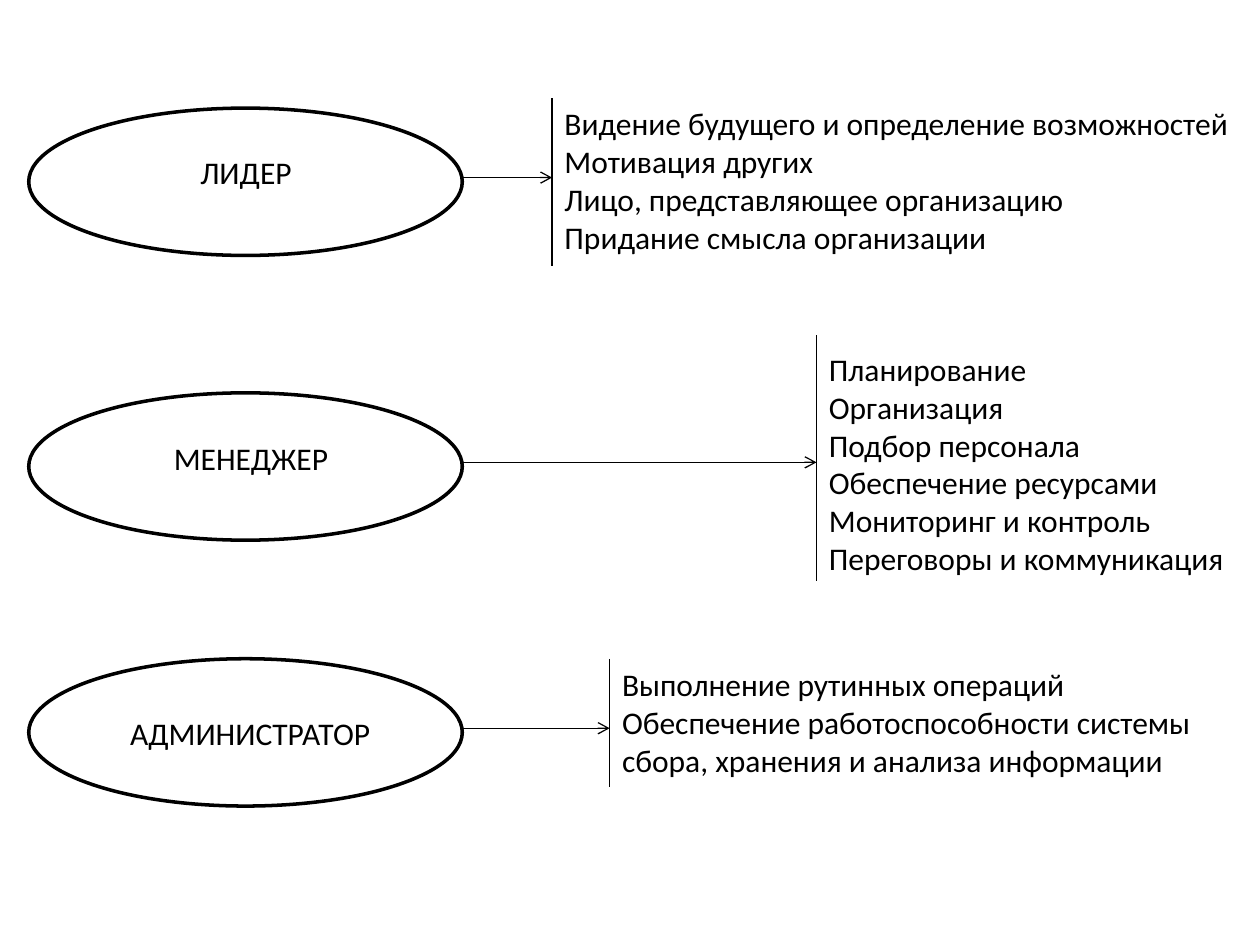
from pptx import Presentation
from pptx.dml.color import RGBColor
from pptx.enum.shapes import MSO_CONNECTOR, MSO_SHAPE
from pptx.enum.text import MSO_AUTO_SIZE, PP_ALIGN
from pptx.oxml.ns import qn
from pptx.util import Cm, Pt
from lxml.etree import SubElement

INK = "000000"
OVAL_LEFT, OVAL_WIDTH, OVAL_HEIGHT = 0.58, 8.74, 2.97
ARROW_DROP = 1.4  # from the top of the oval

# Boxes are (left, top, width, height) in cm; label boxes are relative to the oval,
# and each bar is (top, height)
ROLES = [
    {"role": "ЛИДЕР", "oval_top": 2.18, "label_box": (0.81, 0.79, 7.14, 1.02),
     "duties_box": (11.13, 1.98, 14.27, 3.33), "bar": (1.98, 3.38),
     "duties": ["Видение будущего и определение возможностей",
                "Мотивация других",
                "Лицо, представляющее организацию",
                "Придание смысла организации"]},
    {"role": "МЕНЕДЖЕР", "oval_top": 7.92, "label_box": (0.81, 0.81, 7.34, 1.02),
     "duties_box": (16.46, 6.93, 8.94, 4.88), "bar": (6.76, 4.95),
     "duties": ["Планирование", "Организация", "Подбор персонала",
                "Обеспечение ресурсами", "Мониторинг и контроль",
                "Переговоры и коммуникация"]},
    {"role": "АДМИНИСТРАТОР", "oval_top": 13.28, "label_box": (1.19, 0.99, 6.55, 1.02),
     "duties_box": (12.29, 13.28, 12.5, 2.57), "bar": (13.28, 2.59),
     "duties": ["Выполнение рутинных операций",
                "Обеспечение работоспособности системы сбора, "
                "хранения и анализа информации"]},
]


def color(hex_value):
    return RGBColor.from_string(hex_value)


def add_text(slide, box, lines, align=PP_ALIGN.LEFT):
    frame = slide.shapes.add_textbox(*map(Cm, box)).text_frame
    frame.word_wrap = True
    frame.auto_size = MSO_AUTO_SIZE.SHAPE_TO_FIT_TEXT
    frame.text = "\n".join(lines)
    for paragraph in frame.paragraphs:
        paragraph.alignment = align
        for run in paragraph.runs:
            run.font.name = "Calibri"
            run.font.size = Pt(18)
            run.font.color.rgb = color(INK)


def add_line(slide, start, end, arrow=False):
    line = slide.shapes.add_connector(MSO_CONNECTOR.STRAIGHT, *map(Cm, start + end))
    line.line.color.rgb = color(INK)
    line.line.width = Pt(0.75)
    properties = line._element.spPr
    if arrow:
        SubElement(properties.find(qn("a:ln")), qn("a:tailEnd"), type="arrow")
    SubElement(properties, qn("a:effectLst"))


def add_role(slide, left, top, role, label_box):
    """Oval with its caption."""
    oval = slide.shapes.add_shape(MSO_SHAPE.OVAL, Cm(left), Cm(top),
                                  Cm(OVAL_WIDTH), Cm(OVAL_HEIGHT))
    oval.shadow.inherit = False
    oval.fill.background()
    oval.line.color.rgb = color(INK)
    oval.line.width = Pt(2)
    dx, dy, width, height = label_box
    add_text(slide, (left + dx, top + dy, width, height), [role], PP_ALIGN.CENTER)


def add_duties(slide, box, duties, bar):
    """List of duties with a vertical bar on its left edge."""
    add_text(slide, box, duties)
    left = box[0]
    bar_top, bar_height = bar
    add_line(slide, (left, bar_top), (left, bar_top + bar_height))


def main():
    presentation = Presentation()
    presentation.slide_width, presentation.slide_height = Cm(25.4), Cm(19.05)
    slide = presentation.slides.add_slide(presentation.slide_layouts[6])

    for row in ROLES:
        add_role(slide, OVAL_LEFT, row["oval_top"], row["role"], row["label_box"])
        add_duties(slide, row["duties_box"], row["duties"], row["bar"])
        # Arrow from the oval to the bar
        arrow_y = row["oval_top"] + ARROW_DROP
        add_line(slide, (OVAL_LEFT + OVAL_WIDTH, arrow_y),
                 (row["duties_box"][0], arrow_y), arrow=True)

    presentation.save("out.pptx")


if __name__ == "__main__":
    main()
